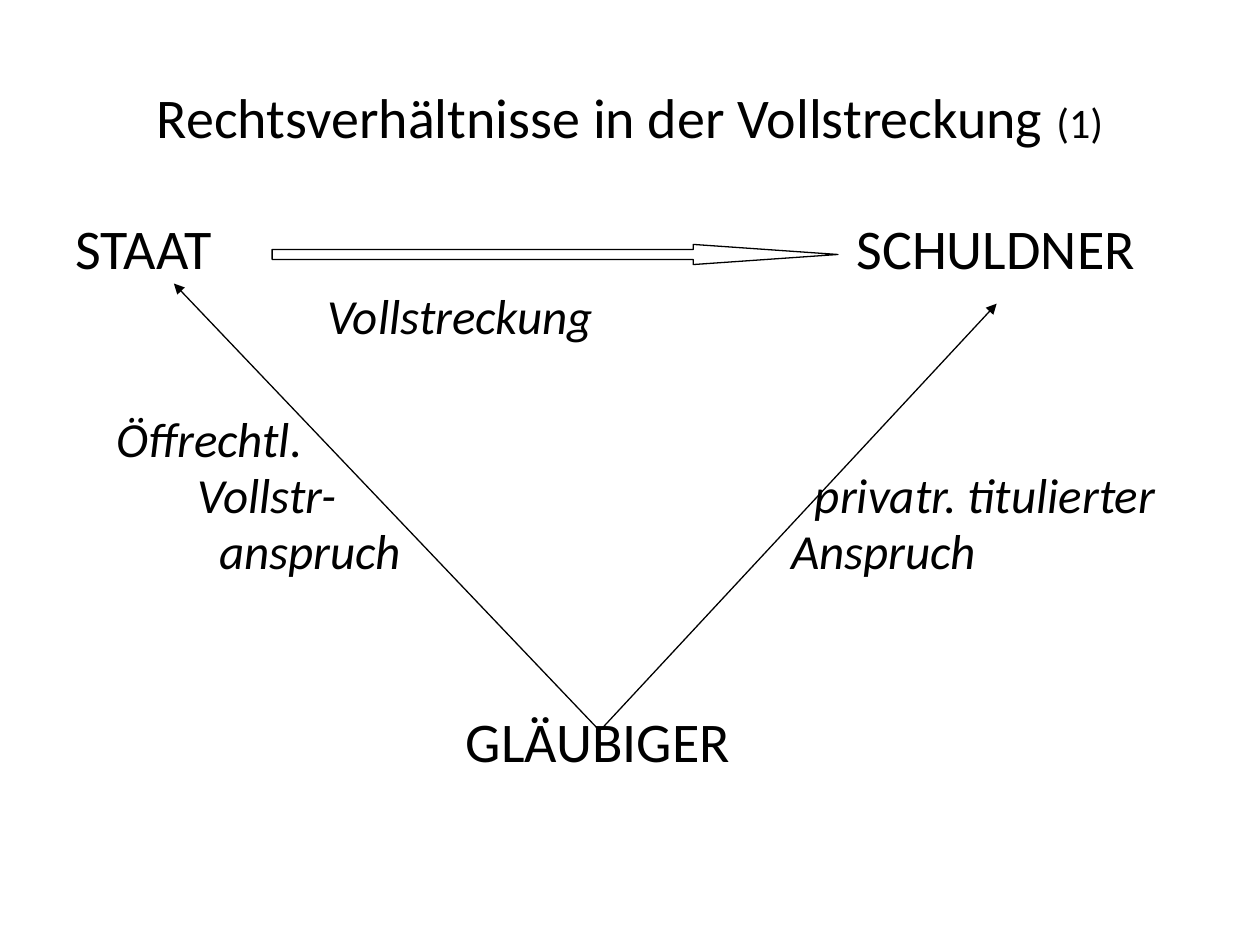
from lxml.etree import SubElement as Sub
from pptx import Presentation
from pptx.dml.color import RGBColor
from pptx.enum.shapes import MSO_CONNECTOR as Link, MSO_SHAPE as Shape
from pptx.enum.text import MSO_ANCHOR as Anchor, PP_ALIGN as Align
from pptx.oxml.ns import qn
from pptx.util import Inches, Pt

BLACK, WHITE = "000000", "FFFFFF"

# Space before in points, text size, italic, tab stops in inches, text
ROWS = [
    (0, 32, False, [6.2], "STAAT\tSCHULDNER"),
    (9.5, 28, True, [2], "\tVollstreckung"),
    (43.5, 28, True, [0.33], "\tÖffrechtl."),
    (5, 28, True, [0.97, 5.87], "\tVollstr-\tprivatr. titulierter"),
    (5, 28, True, [1.14, 5.68], "\tanspruch\tAnspruch"),
    (80, 32, False, [3.1], "\tGLÄUBIGER"),
]


def paint(form, color):
    """Give a fill or font colour format a solid colour."""
    form.rgb = RGBColor.from_string(color)


def fill(shape, color):
    """Fill a shape with one colour."""
    shape.fill.solid()
    paint(shape.fill.fore_color, color)


def outline(shape):
    """Draw a thin black line."""
    shape.line.width = Pt(0.75)
    paint(shape.line.color, BLACK)


def style(run, size, italic=False):
    """Set the font of a run."""
    font = run.font
    font.name, font.size, font.italic = "Calibri", Pt(size), italic
    paint(font.color, BLACK)


def add_title(slide):
    """Place and write the title."""
    title = slide.shapes.title
    title.left, title.top = Inches(0.5), Inches(0.3)
    title.width, title.height = Inches(9), Inches(1.25)
    title.text_frame.vertical_anchor = Anchor.MIDDLE
    para = title.text_frame.paragraphs[0]
    para.alignment = Align.CENTER
    for text, size in (("Rechtsverhältnisse in der Vollstreckung ", 32), ("(1)", 24)):
        run = para.add_run()
        run.text = text
        style(run, size)


def add_body(slide):
    """Write the parties and their relations, set out with tab stops."""
    box = slide.shapes.add_textbox(Inches(0.5), Inches(1.75), Inches(9), Inches(4.95))
    fill(box, WHITE)
    frame = box.text_frame
    frame.word_wrap = True
    for i, (gap, size, italic, stops, text) in enumerate(ROWS):
        para = frame.add_paragraph() if i else frame.paragraphs[0]
        para.text = text
        para.line_spacing = 0.8
        para.space_before = Pt(gap)
        tabs = Sub(para._p.get_or_add_pPr(), qn("a:tabLst"))
        for stop in stops:
            Sub(tabs, qn("a:tab"), pos=str(Inches(stop)), algn="l")
        for run in para.runs:
            style(run, size, italic)


def add_claim(slide, x, y):
    """Draw an arrow from the creditor to a point."""
    line = slide.shapes.add_connector(
        Link.STRAIGHT, Inches(4.76), Inches(5.8), Inches(x), Inches(y))
    outline(line)
    Sub(line.line._get_or_add_ln(), qn("a:tailEnd"), type="triangle")
    Sub(line._element.spPr, qn("a:effectLst"))


def add_force(slide):
    """Draw the block arrow from state to debtor."""
    arrow = slide.shapes.add_shape(
        Shape.RIGHT_ARROW, Inches(2.16), Inches(1.94), Inches(4.49), Inches(0.16))
    arrow.adjustments[0], arrow.adjustments[1] = 0.5, 7.18
    arrow.shadow.inherit = False
    fill(arrow, WHITE)
    outline(arrow)


def main():
    """Build and save the slide."""
    deck = Presentation()
    deck.slide_width, deck.slide_height = Inches(10), Inches(7.5)
    slide = deck.slides.add_slide(deck.slide_layouts[5])
    add_title(slide)
    add_body(slide)
    for x, y in ((7.91, 2.41), (1.38, 2.25)):
        add_claim(slide, x, y)
    add_force(slide)
    deck.save("out.pptx")


if __name__ == "__main__":
    main()
